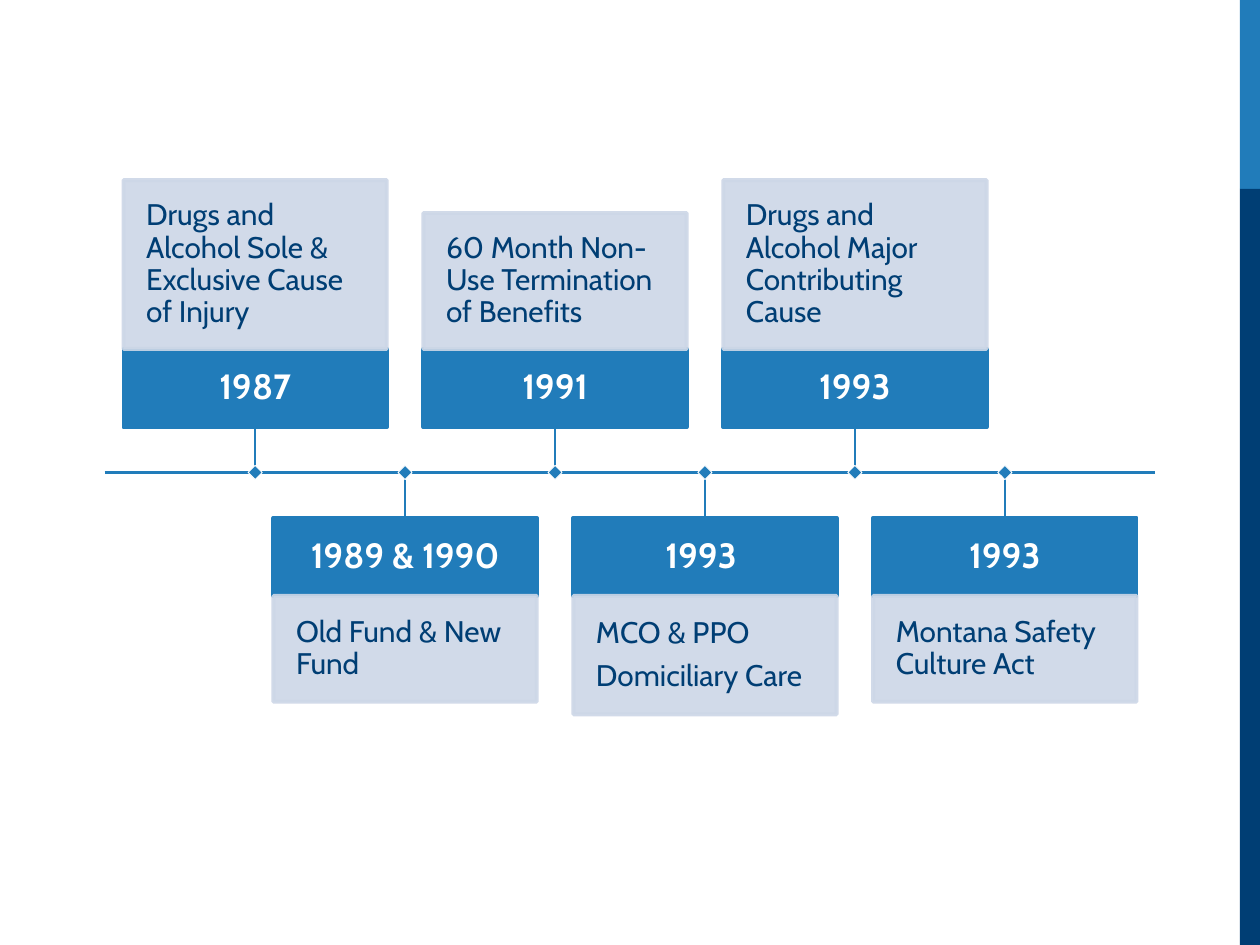
"""Build a slide with a timeline of six dated cards."""
import dataclasses

import pptx
import pptx.dml.color
import pptx.enum.shapes
import pptx.enum.text
import pptx.oxml
import pptx.oxml.ns
import pptx.util

Inches = pptx.util.Inches
Pt = pptx.util.Pt
Align = pptx.enum.text.PP_ALIGN


@dataclasses.dataclass(frozen=True)
class Theme:
    face: str = "Cabin"
    blue: str = "217CBA"
    navy: str = "003E74"
    pale: str = "CDD7E7"
    white: str = "FFFFFF"
    head: int = 20
    body: int = 17
    edge: float = 2.25
    thin: float = 1
    rim: float = 0.5
    gap: int = 6


def color(code):
    return pptx.dml.color.RGBColor.from_string(code)


def apply(target, values):
    for name, value in values.items():
        setattr(target, name, value)


class Maker:
    def __init__(self, deck, theme):
        self.theme = theme
        self.slide = deck.slides.add_slide(deck.slide_layouts[6])

    def rect(self, x, y, w, h, fill, edge=None, width=0, alpha=None):
        kind = pptx.enum.shapes.MSO_SHAPE.RECTANGLE
        shape = self.slide.shapes.add_shape(
            kind, Inches(x), Inches(y), Inches(w), Inches(h))
        shape.shadow.inherit = False
        shape.fill.solid()
        shape.fill.fore_color.rgb = color(fill)
        if edge:
            shape.line.color.rgb = color(edge)
            shape.line.width = Pt(width)
        else:
            shape.line.fill.background()
        if alpha:
            props = shape._element.spPr
            for tint in props.iter(pptx.oxml.ns.qn("a:srgbClr")):
                tint.append(pptx.oxml.parse_xml(
                    f'<a:alpha {pptx.oxml.ns.nsdecls("a")} val="{alpha * 1000}"/>'))
        return shape

    def label(self, shape, lines, inset, align, style):
        frame = shape.text_frame
        sides = ("margin_left", "margin_top", "margin_right", "margin_bottom")
        apply(frame, dict.fromkeys(sides, Inches(inset)))
        apply(frame, {"word_wrap": True,
                      "vertical_anchor": pptx.enum.text.MSO_ANCHOR.MIDDLE})
        for i, line in enumerate(lines):
            para = frame.paragraphs[0] if i == 0 else frame.add_paragraph()
            apply(para, {"alignment": align, "line_spacing": 0.9,
                         "space_before": Pt(self.theme.gap if i else 0)})
            run = para.add_run()
            run.text = line
            apply(run.font, {"name": self.theme.face, "size": Pt(style["size"]),
                             "bold": style["bold"]})
            run.font.color.rgb = color(style["color"])

    def link(self, start, end, width):
        kind = pptx.enum.shapes.MSO_CONNECTOR.STRAIGHT
        line = self.slide.shapes.add_connector(
            kind, *(Inches(v) for v in (*start, *end)))
        line.line.color.rgb = color(self.theme.blue)
        line.line.width = Pt(width)
        line._element.spPr.append(pptx.oxml.parse_xml(
            f'<a:effectLst {pptx.oxml.ns.nsdecls("a")}/>'))
        return line

    def event(self, x, axis, above, year, lines, tall):
        theme = self.theme
        wide, high, stem, mark = 2.09, 0.62, 0.36, 0.08
        mid = x + wide / 2
        top = axis - stem - high if above else axis + stem
        date = self.rect(x, top, wide, high, theme.blue, theme.blue, theme.edge)
        self.label(date, [year], 0.11, Align.CENTER,
                   {"size": theme.head, "bold": True, "color": theme.white})
        card = self.rect(x, top - tall if above else top + high, wide, tall,
                         theme.pale, theme.pale, theme.edge, 90)
        self.label(card, lines, 0.18, Align.LEFT,
                   {"size": theme.body, "bold": False, "color": theme.navy})
        near = axis - stem if above else axis + stem
        self.link((mid, near), (mid, axis), theme.thin).begin_connect(
            date, 2 if above else 0)
        node = self.rect(mid - mark / 2, axis - mark / 2, mark, mark,
                         theme.blue, theme.white, theme.rim)
        node.rotation = 45


def main():
    deck = pptx.Presentation()
    apply(deck, {"slide_width": Inches(10), "slide_height": Inches(7.5)})
    theme = Theme()
    maker = Maker(deck, theme)
    maker.rect(9.84, 0, 0.16, 1.5, theme.blue)
    maker.rect(9.84, 1.5, 0.16, 6, theme.navy)
    axis = 3.75
    maker.link((0.83, axis), (9.17, axis), theme.edge)
    events = [
        ("1987", ["Drugs and Alcohol Sole & Exclusive Cause of Injury"], 1.34),
        ("1989 & 1990", ["Old Fund & New Fund"], 0.84),
        ("1991", ["60 Month Non-Use Termination of Benefits"], 1.08),
        ("1993 ", ["MCO & PPO", "Domiciliary Care"], 0.94),
        ("1993", ["Drugs and Alcohol Major Contributing Cause"], 1.34),
        ("1993", ["Montana Safety Culture Act"], 0.84),
    ]
    for i, (year, lines, tall) in enumerate(events):
        maker.event(0.98 + 1.19 * i, axis, i % 2 == 0, year, lines, tall)
    deck.save("out.pptx")


if __name__ == "__main__":
    main()
